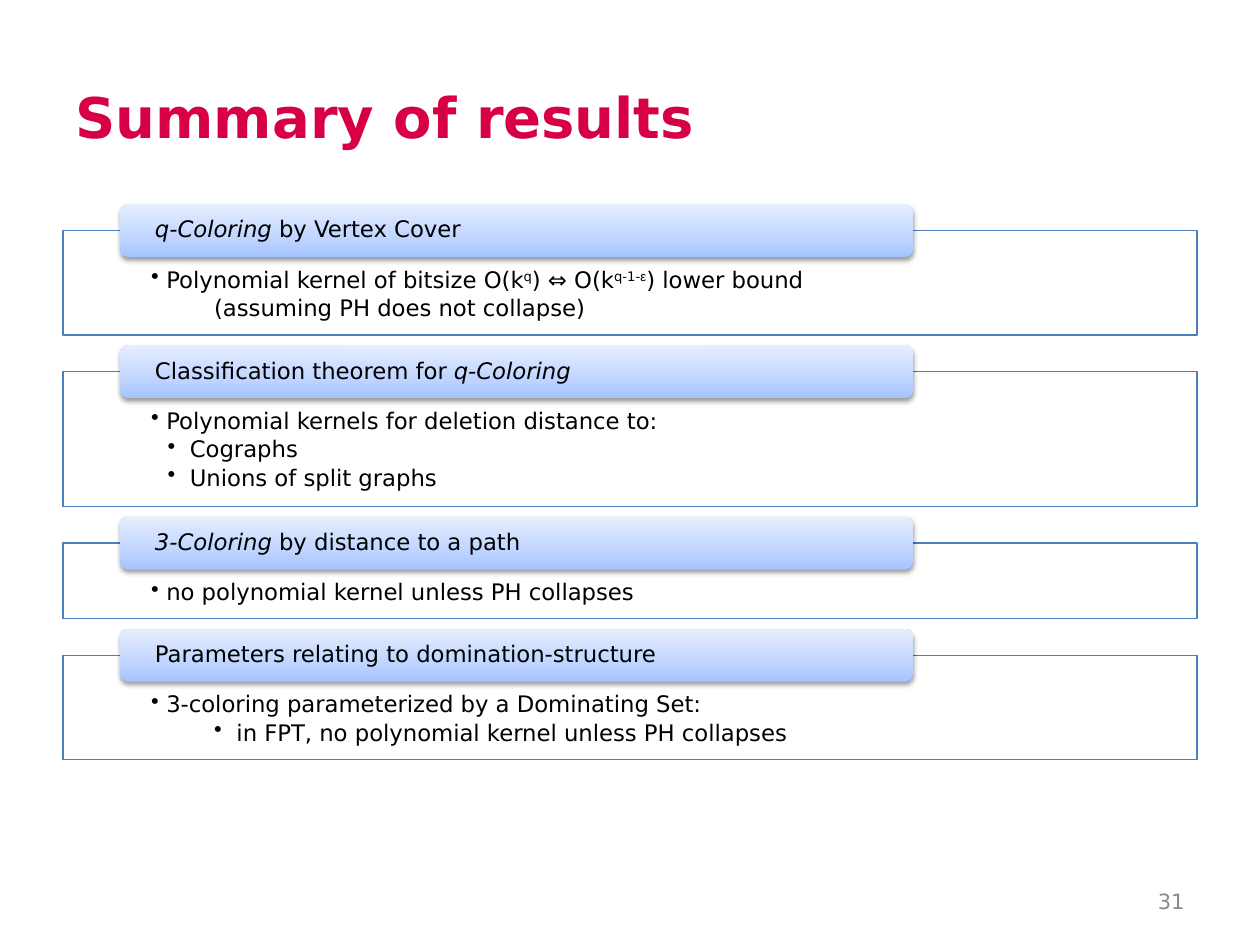
from dataclasses import dataclass
from lxml import etree
from pptx import Presentation
from pptx import util as u
from pptx.dml.color import RGBColor
from pptx.enum import shapes, text
from pptx.oxml import parse_xml
from pptx.oxml.ns import qn

NS = 'xmlns:a="http://schemas.openxmlformats.org/drawingml/2006/main"'


@dataclass(frozen=True)
class Theme:
    font: str = "DejaVu Sans"
    greek: str = "Arial"
    red: str = "D70044"
    gray: str = "898989"
    black: str = "000000"
    white: str = "FFFFFF"
    edge: str = "4B7EBC"
    blues: tuple = ((0, "A4C4FF"), (35, "BFD4FF"), (100, "E6EEFF"))
    head: int = 32
    body: int = 13
    foot: int = 12


class Deck:
    def __init__(self, theme):
        self.theme = theme
        self.prs = Presentation()
        self.prs.slide_width = u.Inches(10)
        self.prs.slide_height = u.Inches(7.5)
        self.slide = self.prs.slides.add_slide(self.prs.slide_layouts[6])

    def style(self, run, size, color, bold=False, kind=""):
        """Format a run; kind is i (italic), sup (raised) or greek (raised)."""
        font = run.font
        font.name = self.theme.greek if kind == "greek" else self.theme.font
        font.size = u.Pt(size)
        font.bold = bold
        font.italic = kind == "i"
        font.color.rgb = RGBColor.from_string(color)
        if kind in ("sup", "greek"):
            run._r.get_or_add_rPr().set("baseline", "30000")

    def fill(self, para, parts):
        """Write (words, kind) parts into a body paragraph."""
        para.alignment = text.PP_ALIGN.LEFT
        para.line_spacing = 0.9
        for words, kind in parts:
            run = para.add_run()
            run.text = words
            self.style(run, self.theme.body, self.theme.black, kind=kind)

    def label(self, words, box, size, color, bold=False, align=text.PP_ALIGN.LEFT):
        shape = self.slide.shapes.add_textbox(*map(u.Inches, box))
        frame = shape.text_frame
        frame.word_wrap = True
        frame.vertical_anchor = text.MSO_ANCHOR.MIDDLE
        frame.text = words
        para = frame.paragraphs[0]
        para.alignment = align
        self.style(para.runs[0], size, color, bold)

    def block(self, kind, box, pads, anchor):
        """Add a shape with room for text, without its default shadow."""
        shape = self.slide.shapes.add_shape(kind, *map(u.Inches, box))
        shape.shadow.inherit = False
        frame = shape.text_frame
        frame.word_wrap = True
        frame.vertical_anchor = anchor
        frame.margin_left = frame.margin_right = u.Inches(pads[0])
        frame.margin_top, frame.margin_bottom = map(u.Inches, pads[1:])
        return shape

    def panel(self, box, lines):
        shape = self.block(shapes.MSO_SHAPE.RECTANGLE, box,
                           (0.7, 0.3, 0.1), text.MSO_ANCHOR.TOP)
        shape.fill.solid()
        shape.fill.fore_color.rgb = RGBColor.from_string(self.theme.white)
        color = shape._element.spPr.find(qn("a:solidFill"))[0]
        etree.SubElement(color, qn("a:alpha")).set("val", "90000")
        shape.line.color.rgb = RGBColor.from_string(self.theme.edge)
        shape.line.width = u.Pt(0.75)
        frame = shape.text_frame
        for i, (left, dot, parts) in enumerate(lines):
            para = frame.add_paragraph() if i else frame.paragraphs[0]
            props = para._p.get_or_add_pPr()
            props.set("marL", str(u.Inches(left)))
            props.set("indent", str(u.Inches(-0.12)))
            if dot:
                etree.SubElement(props, qn("a:buChar")).set("char", "•")
            else:
                etree.SubElement(props, qn("a:buNone"))
            para.space_after = u.Pt(2.3)
            self.fill(para, parts)

    def tab(self, box, parts):
        shape = self.block(shapes.MSO_SHAPE.ROUNDED_RECTANGLE, box,
                           (0.26, 0.02, 0.02), text.MSO_ANCHOR.MIDDLE)
        shape.line.fill.background()
        stops = "".join(
            f'<a:gs pos="{pos * 1000}"><a:srgbClr val="{color}"/></a:gs>'
            for pos, color in self.theme.blues)
        props = shape._element.spPr
        props.find(qn("a:prstGeom")).addnext(parse_xml(
            f'<a:gradFill {NS} rotWithShape="1"><a:gsLst>{stops}</a:gsLst>'
            '<a:lin ang="16200000" scaled="0"/></a:gradFill>'))
        props.find(qn("a:effectLst")).append(parse_xml(
            f'<a:outerShdw {NS} blurRad="{u.Pt(3.1)}" dist="{u.Pt(1.6)}" '
            f'dir="5400000" rotWithShape="0"><a:srgbClr val="{self.theme.black}">'
            '<a:alpha val="38000"/></a:srgbClr></a:outerShdw>'))
        self.fill(shape.text_frame.paragraphs[0], parts)


# Each result: panel height, heading parts, lines (indent, bullet, parts)
RESULTS = [
    (0.83, [("q-Coloring ", "i"), ("by Vertex Cover", "")], [
        (0.12, True, [("Polynomial kernel of bitsize O(k", ""), ("q", "sup"),
                      (") ⇔ O(k", ""), ("q-1-", "sup"), ("ε", "greek"),
                      (") lower bound", "")]),
        (0.62, False, [("(assuming PH does not collapse)", "")])]),
    (1.07, [("Classification theorem for ", ""), ("q-Coloring", "i")], [
        (0.12, True, [("Polynomial kernels for deletion distance to:", "")]),
        (0.25, True, [(" Cographs", "")]),
        (0.25, True, [(" Unions of split graphs", "")])]),
    (0.6, [("3-Coloring", "i"), (" by distance to a path", "")], [
        (0.12, True, [("no polynomial kernel unless PH collapses", "")])]),
    (0.83, [("Parameters relating to domination-structure", "")], [
        (0.12, True, [("3-coloring parameterized by a Dominating Set:", "")]),
        (0.62, True, [(" in FPT, no polynomial kernel unless PH collapses", "")])]),
]


def main():
    theme = Theme()
    deck = Deck(theme)

    # Title and slide number
    deck.label("Summary of results", (0.5, 0.3, 9, 1.25),
               theme.head, theme.red, bold=True)
    deck.label("31", (7.17, 6.95, 2.33, 0.4),
               theme.foot, theme.gray, align=text.PP_ALIGN.RIGHT)

    # Stacked panels, each with a heading tab centred on its top edge
    top, gap, tall = 1.83, 0.29, 0.42
    for high, head, lines in RESULTS:
        deck.panel((0.5, top, 9, high), lines)
        deck.tab((0.95, top - tall / 2, 6.3, tall), head)
        top += high + gap

    deck.prs.save("out.pptx")


if __name__ == "__main__":
    main()
